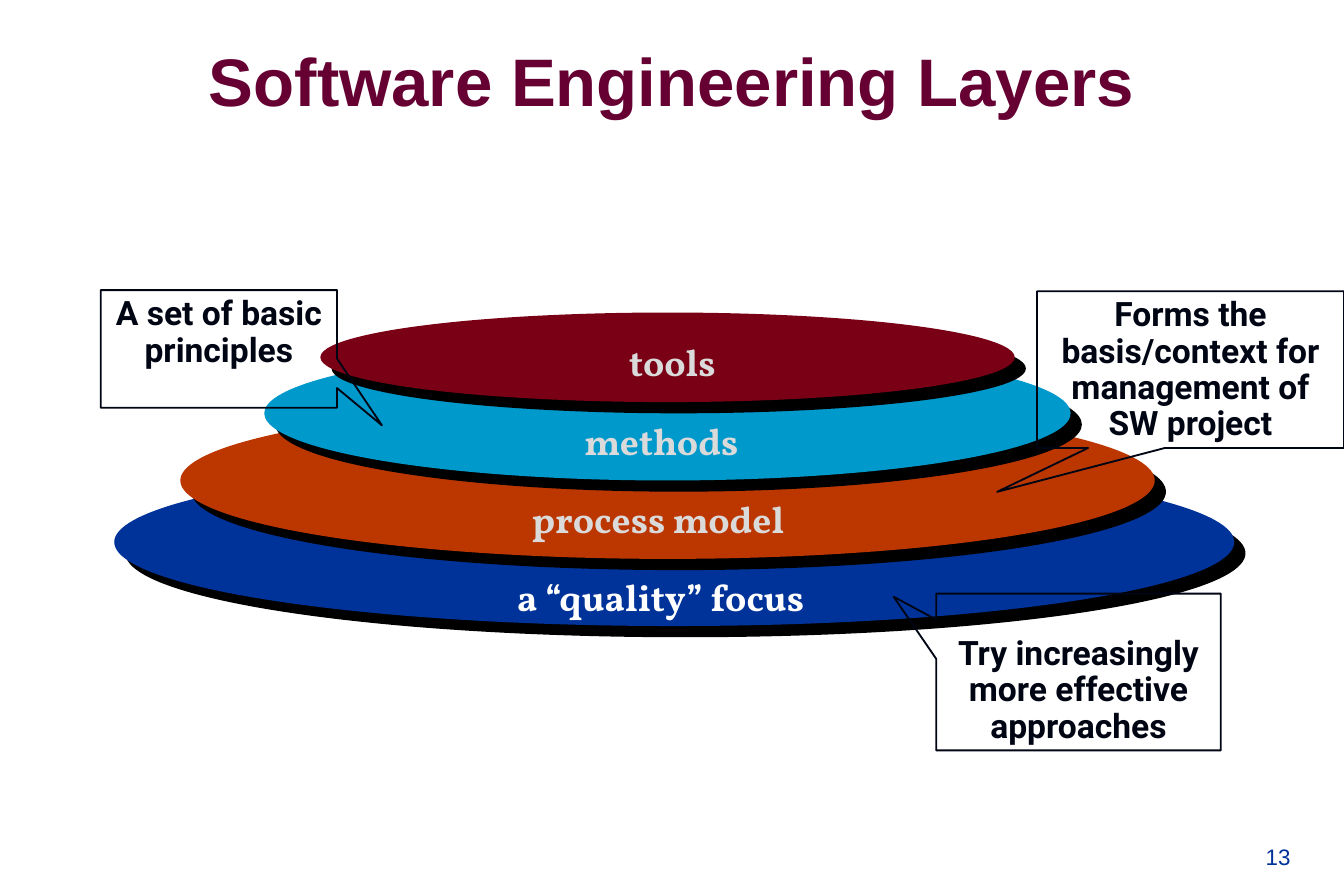
from dataclasses import dataclass
from lxml.etree import SubElement as Sub
from pptx import Presentation
from pptx.dml.color import RGBColor as RGB
from pptx.enum.shapes import MSO_SHAPE as Shape
from pptx.enum.text import MSO_ANCHOR as Anchor, MSO_AUTO_SIZE as Fit, PP_ALIGN as Align
from pptx.oxml.ns import qn
from pptx.util import Inches, Pt


@dataclass(frozen=True)
class Theme:
    title: str = "660033"
    blue: str = "003399"
    rust: str = "BC3700"
    sky: str = "0099CC"
    wine: str = "790015"
    white: str = "FFFFFF"
    pale: str = "DADADA"
    ink: str = "000514"
    shade: str = "000000"
    head: int = 36
    label: int = 20
    note: int = 18
    small: int = 12
    sans: str = "Arial"
    serif: str = "Vollkorn"
    call: str = "Roboto"


T = Theme()
COLS, ROWS = 120, 80
UNIT = Inches(10) / COLS


def grid(*cells):
    return [round(cell * UNIT) for cell in cells]


def write(frame, text, face, size, color, bold=True, align=Align.LEFT):
    frame.text = text
    para = frame.paragraphs[0]
    para.alignment = align
    font = para.font
    font.name, font.size, font.bold = face, Pt(size), bold
    font.color.rgb = RGB.from_string(color)
    return para


def add_title(slide, text):
    title = slide.shapes.title
    title.left, title.top, title.width, title.height = grid(17.4, 3.2, 85.2, 7.9)
    frame = title.text_frame
    frame.margin_left = frame.margin_right = Inches(0.07)
    frame.margin_top = frame.margin_bottom = Inches(0.03)
    frame.word_wrap = False
    frame.auto_size = Fit.SHAPE_TO_FIT_TEXT
    frame.vertical_anchor = Anchor.MIDDLE
    write(frame, text, T.sans, T.head, T.title, align=Align.CENTER)


def add_page(slide, text):
    frame = slide.shapes.add_textbox(*grid(108.1, 72.8, 8.3, 5.5)).text_frame
    frame.word_wrap = True
    frame.vertical_anchor = Anchor.BOTTOM
    write(frame, text, T.sans, T.small, T.blue, False, Align.RIGHT)


def add_shade(shape):
    effects = Sub(shape._element.spPr, qn("a:effectLst"))
    shade = Sub(effects, qn("a:outerShdw"), blurRad="0", dist=str(Pt(8.5)),
                dir=str(45 * 60000), algn="ctr", rotWithShape="0")
    Sub(shade, qn("a:srgbClr"), val=T.shade)


def add_disc(slide, top, wide, high, color):
    left = 10.2 if wide == 100 else 59.6 - wide / 2
    disc = slide.shapes.add_shape(Shape.OVAL, *grid(left, top, wide, high))
    disc.fill.solid()
    disc.fill.fore_color.rgb = RGB.from_string(color)
    disc.line.fill.background()
    add_shade(disc)


def add_label(slide, left, top, wide, text, color):
    frame = slide.shapes.add_textbox(*grid(left, top, wide, 5.2)).text_frame
    frame.word_wrap = False
    frame.auto_size = Fit.SHAPE_TO_FIT_TEXT
    write(frame, text, T.serif, T.label, color)


def add_note(slide, box, tip, text, inset=0.05):
    note = slide.shapes.add_shape(Shape.RECTANGULAR_CALLOUT, *grid(*box))
    note.adjustments[0], note.adjustments[1] = tip
    note.shadow.inherit = False
    note.fill.background()
    note.line.color.rgb = RGB.from_string(T.ink)
    note.line.width = Pt(1)
    frame = note.text_frame
    frame.word_wrap = True
    frame.vertical_anchor = Anchor.TOP
    frame.margin_top = Inches(inset)
    para = write(frame, text, T.call, T.note, T.ink, align=Align.CENTER)
    para.line_spacing = 0.9


def main():
    deck = Presentation()
    deck.slide_width, deck.slide_height = grid(COLS, ROWS)
    slide = deck.slides.add_slide(deck.slide_layouts[5])
    add_title(slide, "Software Engineering Layers")
    add_page(slide, "13")

    discs = [(40.9, 100, 15, T.blue), (35.9, 87, 14, T.rust),
             (30.9, 72, 12, T.sky), (27.9, 62, 8, T.wine)]
    for disc in discs:
        add_disc(slide, *disc)

    labels = [(45, 29.3, "a “quality” focus", T.white),
              (46.3, 25.4, "process model", T.pale),
              (51, 16.3, "methods", T.pale),
              (55, 10.2, "tools", T.pale)]
    for row, (left, wide, text, color) in enumerate(labels):
        add_label(slide, left, 50.7 - 7 * row, wide, text, color)

    add_note(slide, (83.6, 53, 25.4, 14), (-0.65, -0.48),
             "Try increasingly more effective approaches", 0.32)
    add_note(slide, (92.6, 26, 27.4, 14), (-0.63, 0.78),
             "Forms the basis/context for management of SW project")
    add_note(slide, (9, 25.9, 21.1, 10.5), (0.69, 0.65),
             "A set of basic principles")
    deck.save("out.pptx")


if __name__ == "__main__":
    main()
